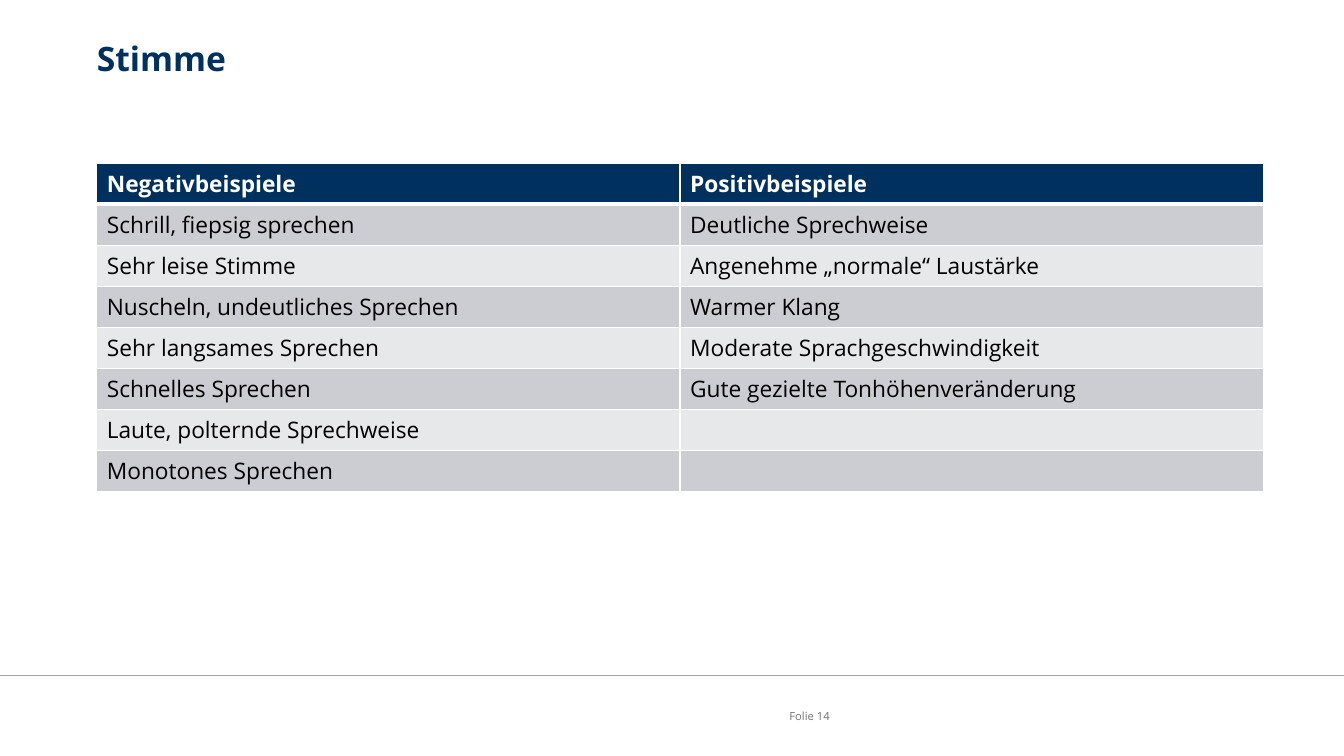
from pptx import Presentation
from pptx.dml.color import RGBColor
from pptx.enum import shapes, text
from pptx.oxml import parse_xml
from pptx.oxml.ns import nsdecls
from pptx.util import Inches, Pt

FONT = "Open Sans"
NAVY, WHITE, BLACK = "00305D", "FFFFFF", "000000"
GREY, RULE_GREY = "727277", "A6A6A6"
BANDS = ["CCCDD2", "E7E8EA"]

TITLE = "Stimme"
EXAMPLES = [
    ("Negativbeispiele", "Positivbeispiele"),
    ("Schrill, fiepsig sprechen", "Deutliche Sprechweise"),
    ("Sehr leise Stimme", "Angenehme „normale“ Laustärke"),
    ("Nuscheln, undeutliches Sprechen", "Warmer Klang"),
    ("Sehr langsames Sprechen", "Moderate Sprachgeschwindigkeit"),
    ("Schnelles Sprechen", "Gute gezielte Tonhöhenveränderung"),
    ("Laute, polternde Sprechweise", ""),
    ("Monotones Sprechen", ""),
]
PAGE_LABEL = "Folie 14"

LEFT, WIDTH = 0.96, 11.57
TABLE_TOP, TABLE_HEIGHT = 1.62, 3.24
RULE_TOP = 6.7


def color(value):
    return RGBColor.from_string(value)


def write(paragraph, words, size, ink, bold):
    paragraph.text = words
    font = paragraph.font
    font.name, font.size, font.bold = FONT, Pt(size), bold
    font.color.rgb = color(ink)


def clear_margins(frame):
    frame.margin_left = frame.margin_right = 0
    frame.margin_top = frame.margin_bottom = 0


def add_border(cell, side, points):
    cell._tc.get_or_add_tcPr().append(parse_xml(
        f'<a:ln{side} {nsdecls("a")} w="{Pt(points)}"><a:solidFill>'
        f'<a:srgbClr val="{WHITE}"/></a:solidFill></a:ln{side}>'))


def add_title(slide):
    title = slide.shapes.title
    title.left, title.top = Inches(LEFT), Inches(0.38)
    title.width, title.height = Inches(WIDTH), Inches(0.75)
    heading = title.text_frame
    clear_margins(heading)
    heading.auto_size = text.MSO_AUTO_SIZE.NONE
    heading.vertical_anchor = text.MSO_ANCHOR.TOP
    write(heading.paragraphs[0], TITLE, 24, NAVY, True)
    heading.paragraphs[0].alignment = text.PP_ALIGN.LEFT


def add_examples(slide):
    row_count, column_count = len(EXAMPLES), len(EXAMPLES[0])
    table = slide.shapes.add_table(
        row_count, column_count, Inches(LEFT), Inches(TABLE_TOP),
        Inches(WIDTH), Inches(TABLE_HEIGHT)).table
    for row, examples in enumerate(EXAMPLES):
        header = row == 0
        for column, example in enumerate(examples):
            cell = table.cell(row, column)
            for side in "LRTB":
                thick = (side == "B" and header) or (side == "T" and row == 1)
                add_border(cell, side, 3 if thick else 1)
            cell.fill.solid()
            cell.fill.fore_color.rgb = color(NAVY if header else BANDS[(row - 1) % 2])
            write(cell.text_frame.paragraphs[0], example, 16.2,
                  WHITE if header else BLACK, header)


def add_footer(slide):
    rule = slide.shapes.add_connector(
        shapes.MSO_CONNECTOR.STRAIGHT, 0, Inches(RULE_TOP),
        Inches(13.33), Inches(RULE_TOP))
    rule.line.color.rgb = color(RULE_GREY)
    rule.line.width = Pt(1)
    rule._element.spPr.append(parse_xml(f'<a:effectLst {nsdecls("a")}/>'))

    page = slide.shapes.add_textbox(
        Inches(7.83), Inches(6.9), Inches(0.77), Inches(0.4)).text_frame
    clear_margins(page)
    page.word_wrap = True
    page.vertical_anchor = text.MSO_ANCHOR.MIDDLE
    write(page.paragraphs[0], PAGE_LABEL, 8, GREY, False)


def main():
    deck = Presentation()
    deck.slide_width, deck.slide_height = Inches(13.33), Inches(7.5)
    slide = deck.slides.add_slide(deck.slide_layouts[5])
    add_title(slide)
    add_examples(slide)
    add_footer(slide)
    deck.save("out.pptx")


if __name__ == "__main__":
    main()
